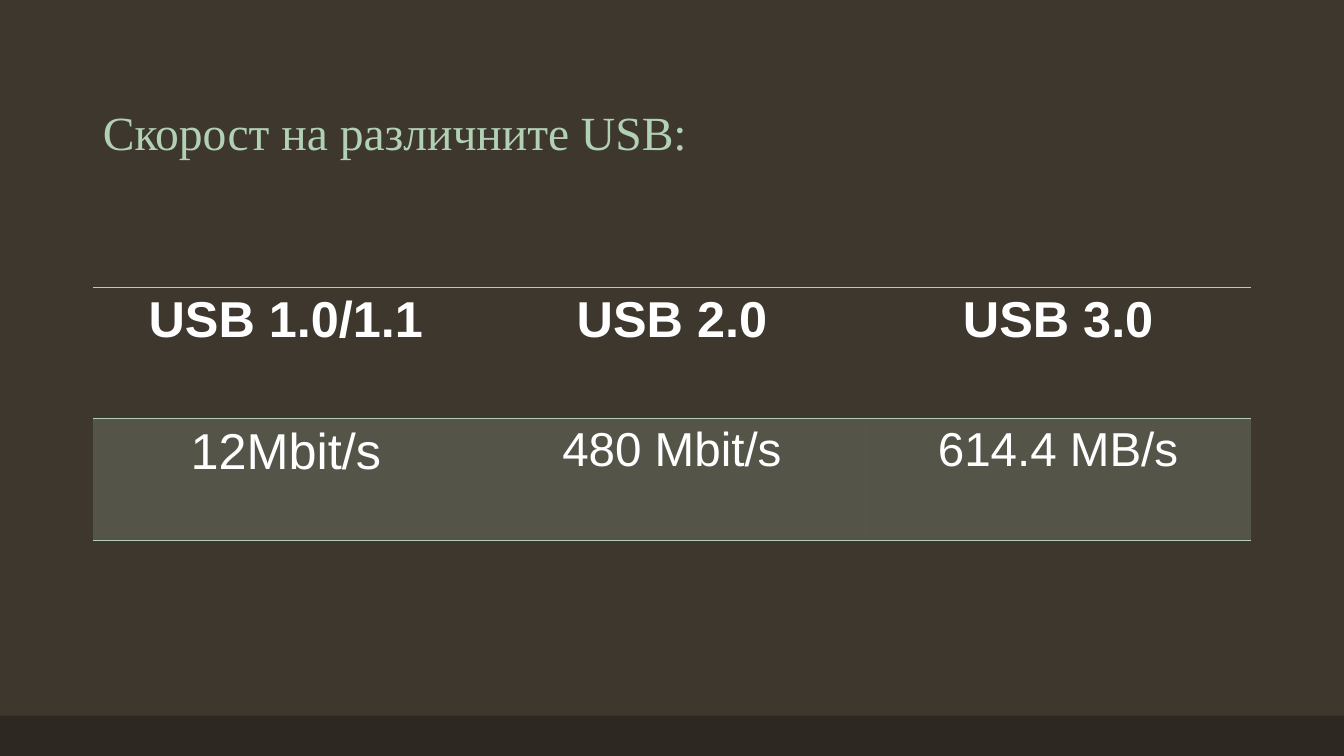
from lxml import etree
from pptx import Presentation
from pptx.dml.color import RGBColor
from pptx.enum.shapes import MSO_SHAPE
from pptx.enum.text import MSO_ANCHOR, MSO_AUTO_SIZE, PP_ALIGN
from pptx.oxml.ns import qn
from pptx.util import Inches, Pt

RECTANGLE = MSO_SHAPE.RECTANGLE
BOTTOM = MSO_ANCHOR.BOTTOM
NO_AUTOFIT = MSO_AUTO_SIZE.NONE
LEFT, CENTER = PP_ALIGN.LEFT, PP_ALIGN.CENTER

BROWN = RGBColor(0x3D, 0x37, 0x2E)
DARK_BROWN = RGBColor(0x2D, 0x29, 0x22)
GREEN = RGBColor(0xB2, 0xD0, 0xB4)
WHITE = RGBColor(0xFF, 0xFF, 0xFF)

HEADING = "Скорост на различните USB:"
SPEEDS = [
    [("USB 1.0/1.1", 36), ("USB 2.0", 36), ("USB 3.0", 36)],
    [("12Mbit/s", 36), ("480 Mbit/s", 34), ("614.4 MB/s", 34)],
]
ROW_HEIGHTS = [1.3, 1.21]
COLUMN_WIDTH = 3.83
RULED_SIDES = [("lnT", "lnB"), ("lnT", "lnB")]


def style_run(run, font, size, color, bold=False):
    run.font.name = font
    run.font.size = Pt(size)
    run.font.color.rgb = color
    run.font.bold = bold


def set_borders(cell, ruled):
    properties = cell._tc.get_or_add_tcPr()
    for position, side in enumerate(("lnL", "lnR", "lnT", "lnB")):
        line = etree.Element(qn(f"a:{side}"), w=str(Pt(1)))
        if side in ruled:
            fill = etree.SubElement(line, qn("a:solidFill"))
            etree.SubElement(fill, qn("a:srgbClr"), val=str(GREEN))
        else:
            etree.SubElement(line, qn("a:noFill"))
        properties.insert(position, line)


def fill_translucent(cell, color, percent):
    cell.fill.solid()
    cell.fill.fore_color.rgb = color
    tint = cell._tc.tcPr.find(f"{qn('a:solidFill')}/{qn('a:srgbClr')}")
    etree.SubElement(tint, qn("a:alpha"), val=str(percent * 1000))


def add_heading(slide):
    heading = slide.shapes.title
    heading.left, heading.top = Inches(0.92), Inches(0.4)
    heading.width, heading.height = Inches(11.5), Inches(1.25)
    frame = heading.text_frame
    frame.text = HEADING
    frame.word_wrap = True
    frame.auto_size = NO_AUTOFIT
    frame.vertical_anchor = BOTTOM
    paragraph = frame.paragraphs[0]
    paragraph.alignment = LEFT
    paragraph.line_spacing = 0.9
    style_run(paragraph.runs[0], "Times New Roman", 34, GREEN)


def add_speeds(slide):
    columns = len(SPEEDS[0])
    speeds = slide.shapes.add_table(
        len(SPEEDS), columns, Inches(0.92), Inches(2.85),
        Inches(COLUMN_WIDTH * columns), Inches(sum(ROW_HEIGHTS))).table
    speeds.horz_banding = False
    for column in speeds.columns:
        column.width = Inches(COLUMN_WIDTH)
    for r, entries in enumerate(SPEEDS):
        speeds.rows[r].height = Inches(ROW_HEIGHTS[r])
        for c, (label, size) in enumerate(entries):
            cell = speeds.cell(r, c)
            cell.text = label
            paragraph = cell.text_frame.paragraphs[0]
            paragraph.alignment = CENTER
            style_run(paragraph.runs[0], "Arial", size, WHITE, bold=r == 0)
            if r == 0:
                cell.fill.background()
            else:
                fill_translucent(cell, GREEN, 20)
            set_borders(cell, RULED_SIDES[r])


def main():
    deck = Presentation()
    deck.slide_width, deck.slide_height = Inches(13.33), Inches(7.5)
    slide = deck.slides.add_slide(deck.slide_layouts[5])
    slide.background.fill.solid()
    slide.background.fill.fore_color.rgb = BROWN

    footer_band = slide.shapes.add_shape(
        RECTANGLE, 0, Inches(7.1), deck.slide_width, Inches(0.4))
    footer_band.shadow.inherit = False
    footer_band.fill.solid()
    footer_band.fill.fore_color.rgb = DARK_BROWN
    footer_band.line.fill.background()

    add_heading(slide)
    add_speeds(slide)
    deck.save("out.pptx")


if __name__ == "__main__":
    main()
